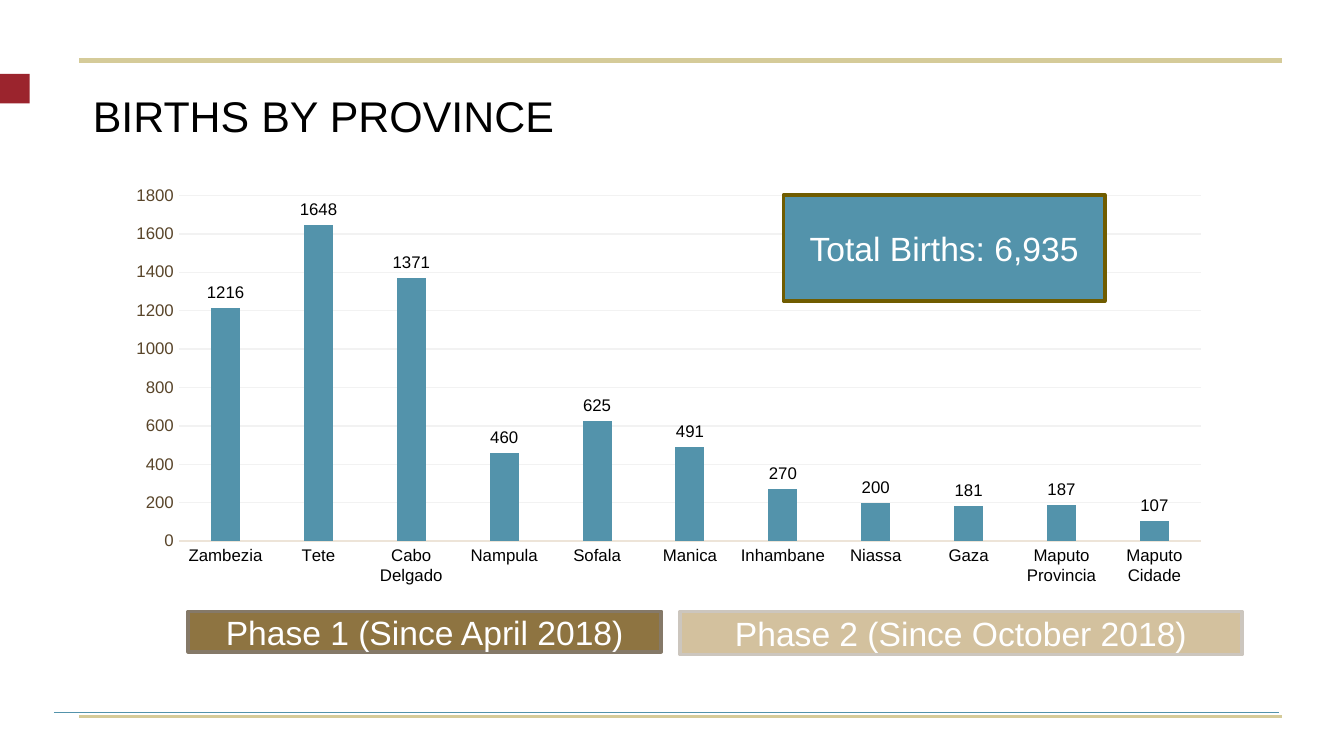
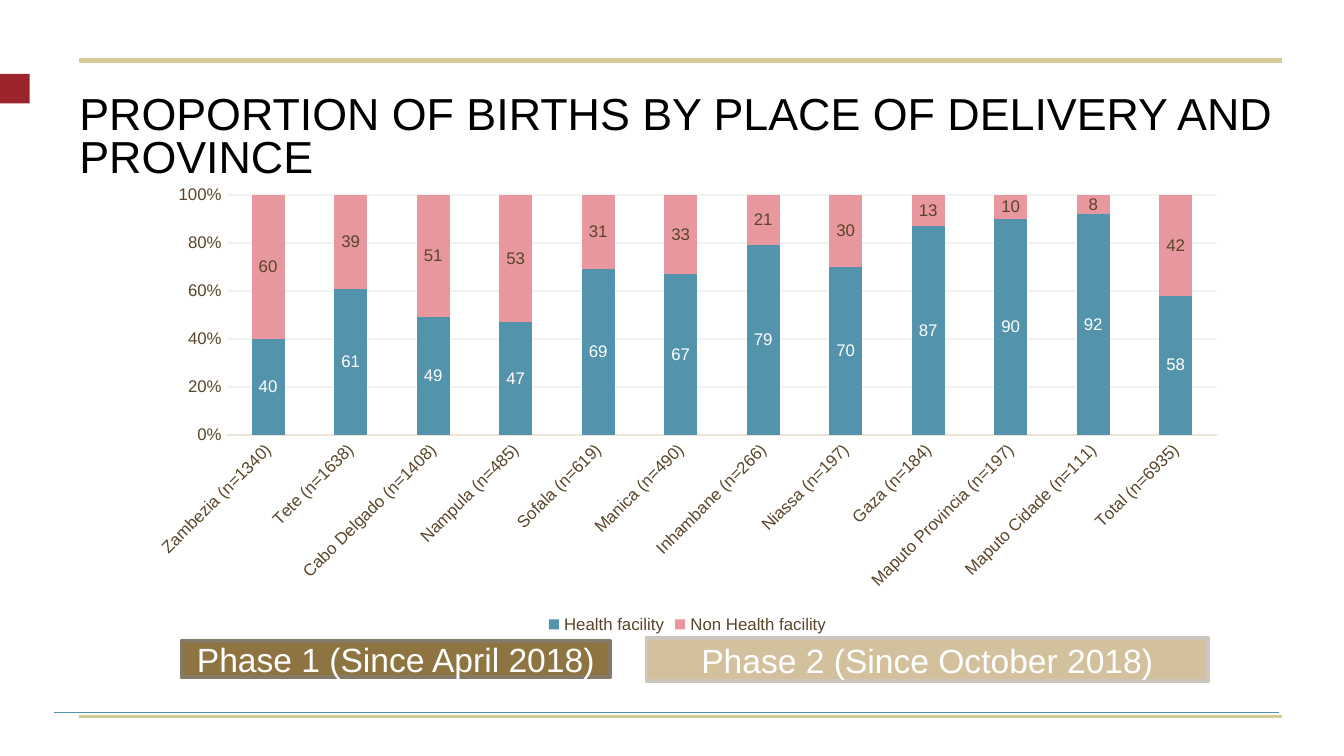
"""Two slides on births by province, with phase badges under each chart."""
from dataclasses import dataclass
from typing import Any, NamedTuple

from lxml import etree
from pptx import Presentation
from pptx.chart.chart import Chart
from pptx.chart.data import CategoryChartData
from pptx.dml.color import RGBColor
from pptx.enum.chart import XL_CHART_TYPE, XL_LABEL_POSITION, XL_LEGEND_POSITION, XL_TICK_MARK
from pptx.enum.shapes import MSO_CONNECTOR, MSO_SHAPE
from pptx.enum.text import MSO_ANCHOR, MSO_AUTO_SIZE, PP_ALIGN
from pptx.oxml.ns import qn
from pptx.slide import Slide, SlideLayout
from pptx.util import Inches, Pt

CLUSTERED = XL_CHART_TYPE.COLUMN_CLUSTERED
STACKED = XL_CHART_TYPE.COLUMN_STACKED_100
OUTSIDE, CENTRE_LABEL = XL_LABEL_POSITION.OUTSIDE_END, XL_LABEL_POSITION.CENTER
LEGEND_BOTTOM = XL_LEGEND_POSITION.BOTTOM
NO_TICK = XL_TICK_MARK.NONE
STRAIGHT, RECTANGLE = MSO_CONNECTOR.STRAIGHT, MSO_SHAPE.RECTANGLE
TOP, MIDDLE = MSO_ANCHOR.TOP, MSO_ANCHOR.MIDDLE
NO_FIT = MSO_AUTO_SIZE.NONE
LEFT, CENTRE = PP_ALIGN.LEFT, PP_ALIGN.CENTER

FONT = "Arial"
BLACK, WHITE, BROWN = "000000", "FFFFFF", "59452A"
TEAL, PINK, RED, SAND = "5393AB", "E7979D", "9B242D", "D5CB99"
AXIS_LINE, GRID_LINE = "EDE4D8", "F2F2F2"
CELL = Inches(0.1)
COLUMNS, ROWS = 100, 56.25


class Area(NamedTuple):
    """A box on the grid, in columns and rows."""

    column: float
    row: float
    columns: float
    rows: float


class Rule(NamedTuple):
    """A horizontal line across the page."""

    start: float
    end: float
    row: float
    color: str
    width: float


class Style(NamedTuple):
    """The look of a badge."""

    text: str
    fill: str
    outline: str


class Badge(NamedTuple):
    """A badge style set in an area."""

    style: Style
    area: Area


class Bars(NamedTuple):
    """One series of a chart."""

    name: str
    values: tuple[int, ...]
    color: str
    label_color: str


@dataclass(frozen=True)
class BirthChart:
    """A column chart and its scale."""

    area: Area
    kind: Any
    categories: tuple[str, ...]
    series: tuple[Bars, ...]
    gap: int
    overlap: int
    top: float
    step: float
    axis_format: str
    label_position: Any
    category_color: str
    rotation: int = 0
    legend: bool = False


@dataclass(frozen=True)
class Page:
    """The content of one slide."""

    title: str
    title_size: float
    title_area: Area
    chart: BirthChart
    badges: tuple[Badge, ...]


RULES = (
    Rule(4, 95.2, 53, TEAL, 0.5),
    Rule(5.9, 95.4, 4.5, SAND, 3),
    Rule(5.9, 95.4, 53.3, SAND, 1.5),
)
MARKER = Area(0, 5.5, 2.2, 2.2)
PHASE_ONE = Style("Phase 1 (Since April 2018)", "8E7441", "857968")
PHASE_TWO = Style("Phase 2 (Since October 2018)", "D3C19E", "CCC6BE")
TOTAL = Style("Total Births: 6,935", TEAL, "705C00")

PROVINCES = (
    "Zambezia", "Tete", "Cabo Delgado", "Nampula", "Sofala", "Manica", "Inhambane",
    "Niassa", "Gaza", "Maputo Provincia", "Maputo Cidade",
)
SAMPLES = (1340, 1638, 1408, 485, 619, 490, 266, 197, 184, 197, 111, 6935)
BIRTHS = (1216, 1648, 1371, 460, 625, 491, 270, 200, 181, 187, 107)
FACILITY = (40, 61, 49, 47, 69, 67, 79, 70, 87, 90, 92, 58)
ELSEWHERE = (60, 39, 51, 53, 31, 33, 21, 30, 13, 10, 8, 42)

PAGES = (
    Page(
        "BIRTHS BY PROVINCE", 23, Area(5.9, 6.3, 89.5, 6.9),
        BirthChart(
            Area(8.5, 13.2, 82.5, 31), CLUSTERED, PROVINCES,
            (Bars("Series 1", BIRTHS, TEAL, BLACK),),
            219, -27, 1800, 200, "General", OUTSIDE, BLACK,
        ),
        (
            Badge(PHASE_ONE, Area(14, 45.5, 35.2, 3)),
            Badge(TOTAL, Area(58.3, 14.5, 23.9, 7.9)),
            Badge(PHASE_TWO, Area(50.6, 45.5, 41.8, 3.2)),
        ),
    ),
    Page(
        "PROPORTION OF BIRTHS BY PLACE OF DELIVERY AND PROVINCE", 24,
        Area(4.9, 6.2, 94.1, 6.9),
        BirthChart(
            Area(10.1, 13.1, 82.1, 34.5), STACKED,
            tuple(f"{name} (n={count})" for name, count in zip(PROVINCES + ("Total",), SAMPLES)),
            (
                Bars("Health facility", FACILITY, TEAL, WHITE),
                Bars("Non Health facility", ELSEWHERE, PINK, BROWN),
            ),
            150, 100, 1, 0.2, "0%", CENTRE_LABEL, BROWN, rotation=-45, legend=True,
        ),
        (
            Badge(PHASE_ONE, Area(13.5, 47.7, 31.9, 2.7)),
            Badge(PHASE_TWO, Area(48.1, 47.5, 41.8, 3.2)),
        ),
    ),
)


def cells(count: float) -> int:
    """Turn grid cells into a length."""
    return int(CELL * count)


def lengths(area: Area) -> tuple[int, ...]:
    """Turn an area into left, top, width and height."""
    return tuple(cells(count) for count in area)


def assign(target: Any, values: dict[str, Any]) -> None:
    """Set each named value on the target."""
    for name, value in values.items():
        setattr(target, name, value)


def paint(fill: Any, color: str) -> None:
    """Give a fill one solid colour."""
    fill.solid()
    fill.fore_color.rgb = RGBColor.from_string(color)


def draw_line(line: Any, color: str, width: float) -> None:
    """Give a line its colour and width."""
    paint(line.fill, color)
    line.width = Pt(width)


def set_font(font: Any, size: float, color: str) -> None:
    """Give a font its face, size and colour."""
    assign(font, {"name": FONT, "size": Pt(size), "bold": False})
    paint(font.fill, color)


def add_box(slide: Slide, area: Area, fill: str) -> Any:
    """Add a plain rectangle without outline."""
    box = slide.shapes.add_shape(RECTANGLE, *lengths(area))
    box.shadow.inherit = False
    paint(box.fill, fill)
    box.line.fill.background()
    return box


def add_rule(slide: Slide, rule: Rule) -> Any:
    """Add a horizontal line without shadow."""
    row = cells(rule.row)
    line = slide.shapes.add_connector(STRAIGHT, cells(rule.start), row, cells(rule.end), row)
    draw_line(line.line, rule.color, rule.width)
    etree.SubElement(line.element.spPr, qn("a:effectLst"))
    return line


def add_badge(slide: Slide, badge: Badge) -> None:
    """Add an outlined box with centred text."""
    box = add_box(slide, badge.area, badge.style.fill)
    draw_line(box.line, badge.style.outline, 2)
    assign(box.text_frame, {"word_wrap": True, "vertical_anchor": MIDDLE})
    para = box.text_frame.paragraphs[0]
    para.alignment = CENTRE
    span = para.add_run()
    span.text = badge.style.text
    set_font(span.font, 18, WHITE)


def set_title(slide: Slide, page: Page) -> None:
    """Fill and place the title."""
    title = slide.shapes.title
    assign(title, dict(zip(("left", "top", "width", "height"), lengths(page.title_area))))
    frame = title.text_frame
    margins = {f"margin_{side}": CELL for side in ("left", "top", "right", "bottom")}
    assign(frame, margins | {"word_wrap": True, "auto_size": NO_FIT, "vertical_anchor": TOP})
    para = frame.paragraphs[0]
    assign(para, {"alignment": LEFT, "line_spacing": Pt(23)})
    span = para.add_run()
    span.text = page.title
    set_font(span.font, page.title_size, BLACK)


def format_axes(chart: Chart, plan: BirthChart) -> None:
    """Set the scale, lines and labels of both axes."""
    category, value = chart.category_axis, chart.value_axis
    for axis, color in ((category, plan.category_color), (value, BROWN)):
        assign(axis, {"major_tick_mark": NO_TICK, "minor_tick_mark": NO_TICK})
        set_font(axis.tick_labels.font, 9, color)
    assign(value, {"minimum_scale": 0, "maximum_scale": plan.top, "major_unit": plan.step})
    assign(value.tick_labels, {"number_format": plan.axis_format, "number_format_is_linked": False})
    value.format.line.fill.background()
    draw_line(value.major_gridlines.format.line, GRID_LINE, 0.75)
    draw_line(category.format.line, AXIS_LINE, 0.75)
    if plan.rotation:
        body = chart.element.find(f".//{qn('c:catAx')}/{qn('c:txPr')}/{qn('a:bodyPr')}")
        body.set("rot", str(plan.rotation * 60000))
        body.set("vert", "horz")


def add_birth_chart(slide: Slide, plan: BirthChart) -> None:
    """Add a column chart with value labels."""
    data = CategoryChartData()
    data.categories = plan.categories
    for bars in plan.series:
        data.add_series(bars.name, bars.values)
    chart = slide.shapes.add_chart(plan.kind, *lengths(plan.area), data).chart
    assign(chart, {"has_title": False, "has_legend": plan.legend})
    set_font(chart.font, 10, BROWN)
    plot = chart.plots[0]
    assign(plot, {"gap_width": plan.gap, "overlap": plan.overlap, "vary_by_categories": False})
    for series, bars in zip(plot.series, plan.series):
        paint(series.format.fill, bars.color)
        labels = series.data_labels
        assign(labels, {"show_value": True, "number_format": "0",
                        "number_format_is_linked": False, "position": plan.label_position})
        set_font(labels.font, 9, bars.label_color)
    format_axes(chart, plan)
    if plan.legend:
        assign(chart.legend, {"position": LEGEND_BOTTOM, "include_in_layout": False})
        set_font(chart.legend.font, 9, BROWN)


def clear_layout(layout: SlideLayout) -> None:
    """Keep only the title placeholder of the layout."""
    for holder in list(layout.placeholders)[1:]:
        holder.element.getparent().remove(holder.element)


def furnish_layout(layout: SlideLayout, slide: Slide) -> None:
    """Draw the marker and rules once and hand them to the layout."""
    for shape in [add_box(slide, MARKER, RED), *(add_rule(slide, rule) for rule in RULES)]:
        layout.shapes.element.append(shape.element)


def main() -> None:
    """Build and save the deck."""
    deck = Presentation()
    assign(deck, {"slide_width": cells(COLUMNS), "slide_height": cells(ROWS)})
    layout = deck.slide_layouts[5]
    clear_layout(layout)
    for number, page in enumerate(PAGES):
        slide = deck.slides.add_slide(layout)
        if number == 0:
            furnish_layout(layout, slide)
        set_title(slide, page)
        add_birth_chart(slide, page.chart)
        for badge in page.badges:
            add_badge(slide, badge)
    deck.save("out.pptx")


if __name__ == "__main__":
    main()
